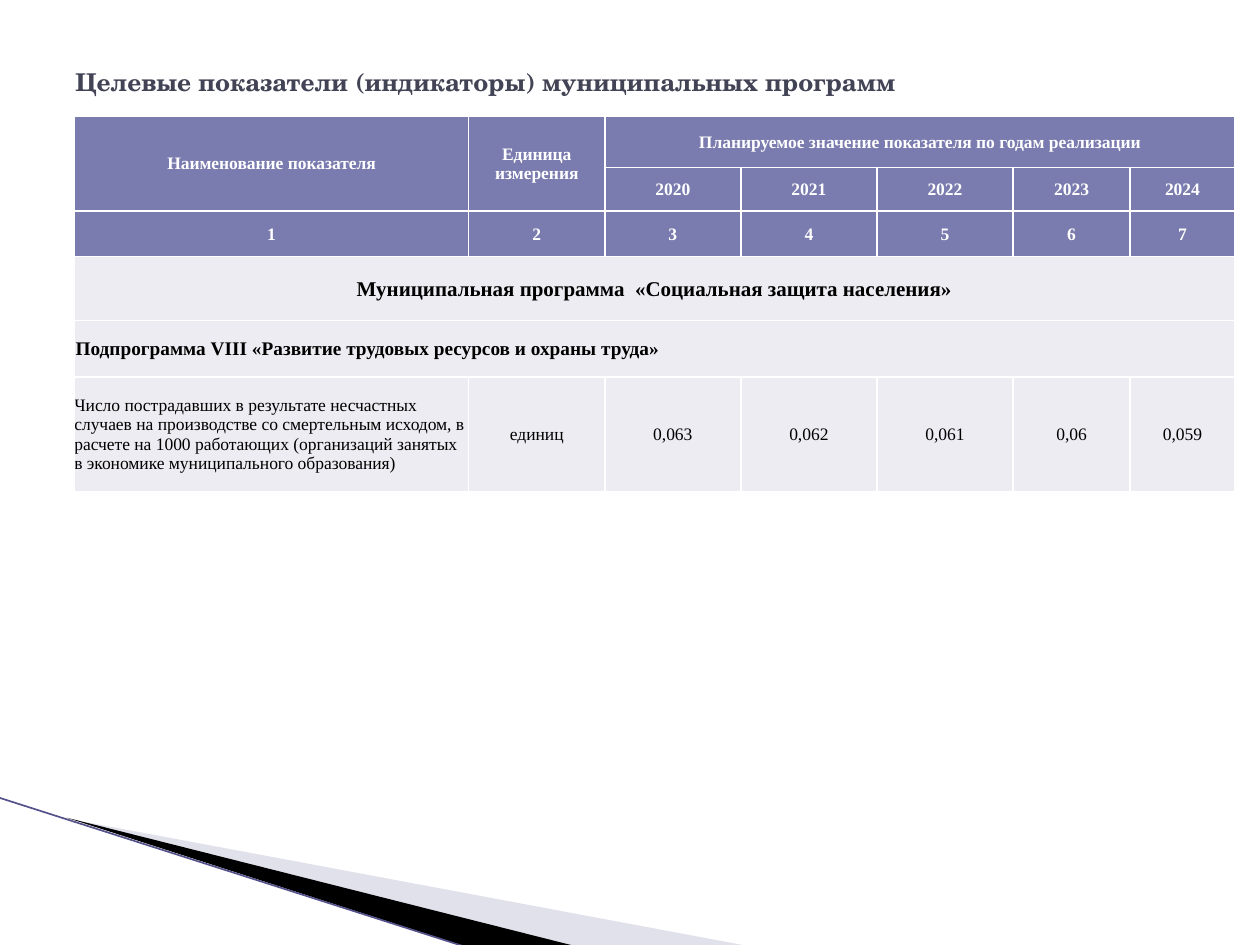
from dataclasses import dataclass

import pptx
import pptx.dml.color
import pptx.enum.text
import pptx.oxml
import pptx.oxml.ns
import pptx.util
from pptx.util import Inches

ALIGN = pptx.enum.text.PP_ALIGN
MIDDLE = pptx.enum.text.MSO_ANCHOR.MIDDLE
NS = pptx.oxml.ns.nsdecls("a")


@dataclass(frozen=True)
class Theme:
    title_font: str = "TeX Gyre Schola"
    table_font: str = "Times New Roman"
    title: str = "424456"
    header: str = "7A7BAE"
    body: str = "ECECF2"
    white: str = "FFFFFF"
    black: str = "000000"
    wedge: str = "B6B6D1"
    edge: str = "53528A"
    title_size: float = 14
    program_size: float = 12
    subprogram_size: float = 11
    cell_size: float = 10


THEME = Theme()

COLUMNS = [3.13, 1.08, 1.08, 1.08, 1.08, 0.93, 0.83]
ROWS = [0.41, 0.31, 0.36, 0.51, 0.45, 0.91]
YEARS = ["2020", "2021", "2022", "2023", "2024"]
VALUES = [
    "Число пострадавших в результате несчастных случаев на производстве "
    "со смертельным исходом, в расчете на 1000 работающих (организаций "
    "занятых в экономике муниципального образования)",
    "единиц", "0,063", "0,062", "0,061", "0,06", "0,059",
]


def rgb(value):
    return pptx.dml.color.RGBColor.from_string(value)


def write(tf, text, *, size, color, font=THEME.table_font, bold=False,
          align=ALIGN.LEFT):
    tf.word_wrap = True
    p = tf.paragraphs[0]
    p.alignment = align
    r = p.add_run()
    r.text = text
    r.font.name = font
    r.font.size = pptx.util.Pt(size)
    r.font.bold = bold
    r.font.color.rgb = rgb(color)


def add_wedge(slide, points, color, alpha=None):
    """Draw a filled outline; alpha is its opacity in percent."""
    points = [(Inches(x), Inches(y)) for x, y in points]
    builder = slide.shapes.build_freeform(*points[0])
    builder.add_line_segments(points[1:], close=True)
    sp = builder.convert_to_shape()
    sp.shadow.inherit = False
    sp.line.fill.background()
    sp.fill.solid()
    sp.fill.fore_color.rgb = rgb(color)
    if alpha is not None:
        clr = sp.fill._xPr.find(".//" + pptx.oxml.ns.qn("a:srgbClr"))
        clr.append(pptx.oxml.parse_xml(f'<a:alpha {NS} val="{alpha * 1000}"/>'))


def add_edge(slide, start, end):
    line = slide.shapes.add_connector(
        pptx.enum.shapes.MSO_CONNECTOR.STRAIGHT,
        *(Inches(v) for v in start + end))
    line.line.color.rgb = rgb(THEME.edge)
    line.line.width = pptx.util.Pt(0.95)
    line._element.spPr.append(pptx.oxml.parse_xml(f"<a:effectLst {NS}/>"))


def add_title(slide, text):
    box = slide.shapes.add_textbox(Inches(0.5), Inches(0.3), Inches(9), Inches(0.69))
    box.text_frame.vertical_anchor = MIDDLE
    write(box.text_frame, text, size=THEME.title_size, color=THEME.title,
          font=THEME.title_font, bold=True)


def style_cell(cell, fill, inset):
    """Set fill, insets and thin white borders."""
    cell.margin_left = cell.margin_right = cell.margin_top = Inches(inset)
    cell.margin_bottom = 0
    cell.vertical_anchor = MIDDLE
    tcPr = cell._tc.get_or_add_tcPr()
    for side in ("lnL", "lnR", "lnT", "lnB"):
        tcPr.append(pptx.oxml.parse_xml(
            f'<a:{side} {NS} w="12700"><a:solidFill>'
            f'<a:srgbClr val="{THEME.white}"/></a:solidFill></a:{side}>'))
    cell.fill.solid()
    cell.fill.fore_color.rgb = rgb(fill)


def add_indicator_table(slide):
    table = slide.shapes.add_table(
        len(ROWS), len(COLUMNS), Inches(0.59), Inches(0.92),
        Inches(sum(COLUMNS)), Inches(sum(ROWS))).table
    for column, width in zip(table.columns, COLUMNS):
        column.width = Inches(width)
    for i, (row, height) in enumerate(zip(table.rows, ROWS)):
        row.height = Inches(height)
        for cell in row.cells:
            style_cell(cell, THEME.header if i < 3 else THEME.body,
                       0 if i == 5 else 0.01)

    last = len(COLUMNS) - 1
    for first, end in [((0, 0), (1, 0)), ((0, 1), (1, 1)), ((0, 2), (0, last)),
                       ((3, 0), (3, last)), ((4, 0), (4, last))]:
        table.cell(*first).merge(table.cell(*end))

    def fill_row(row, texts, start=0, **fmt):
        for col, text in enumerate(texts, start):
            write(table.cell(row, col).text_frame, text, **fmt)

    header = dict(size=THEME.cell_size, color=THEME.white, bold=True,
                  align=ALIGN.CENTER)
    body = dict(size=THEME.cell_size, color=THEME.black)
    fill_row(0, ["Наименование показателя", "Единица измерения",
                 "Планируемое значение показателя по годам реализации"], **header)
    fill_row(1, YEARS, start=2, **header)
    fill_row(2, [str(n) for n in range(1, len(COLUMNS) + 1)], **header)
    fill_row(3, ["Муниципальная программа  «Социальная защита населения»"],
             size=THEME.program_size, color=THEME.black, bold=True,
             align=ALIGN.CENTER)
    fill_row(4, ["Подпрограмма VIII «Развитие трудовых ресурсов и охраны труда»"],
             size=THEME.subprogram_size, color=THEME.black, bold=True)
    fill_row(5, VALUES[:1], **body)
    fill_row(5, VALUES[1:], start=1, align=ALIGN.CENTER, **body)


def main():
    prs = pptx.Presentation()
    prs.slide_width, prs.slide_height = Inches(10), Inches(7.5)
    slide = prs.slides.add_slide(prs.slide_layouts[6])
    add_wedge(slide, [(0.55, 6.5), (5.95, 7.51), (4.56, 7.51)], THEME.wedge, alpha=40)
    add_wedge(slide, [(0.53, 6.49), (4.57, 7.51), (3.72, 7.52)], THEME.black)
    add_edge(slide, (-0.01, 6.33), (3.71, 7.52))
    add_title(slide, "Целевые показатели (индикаторы) муниципальных программ")
    add_indicator_table(slide)
    prs.save("out.pptx")


if __name__ == "__main__":
    main()
